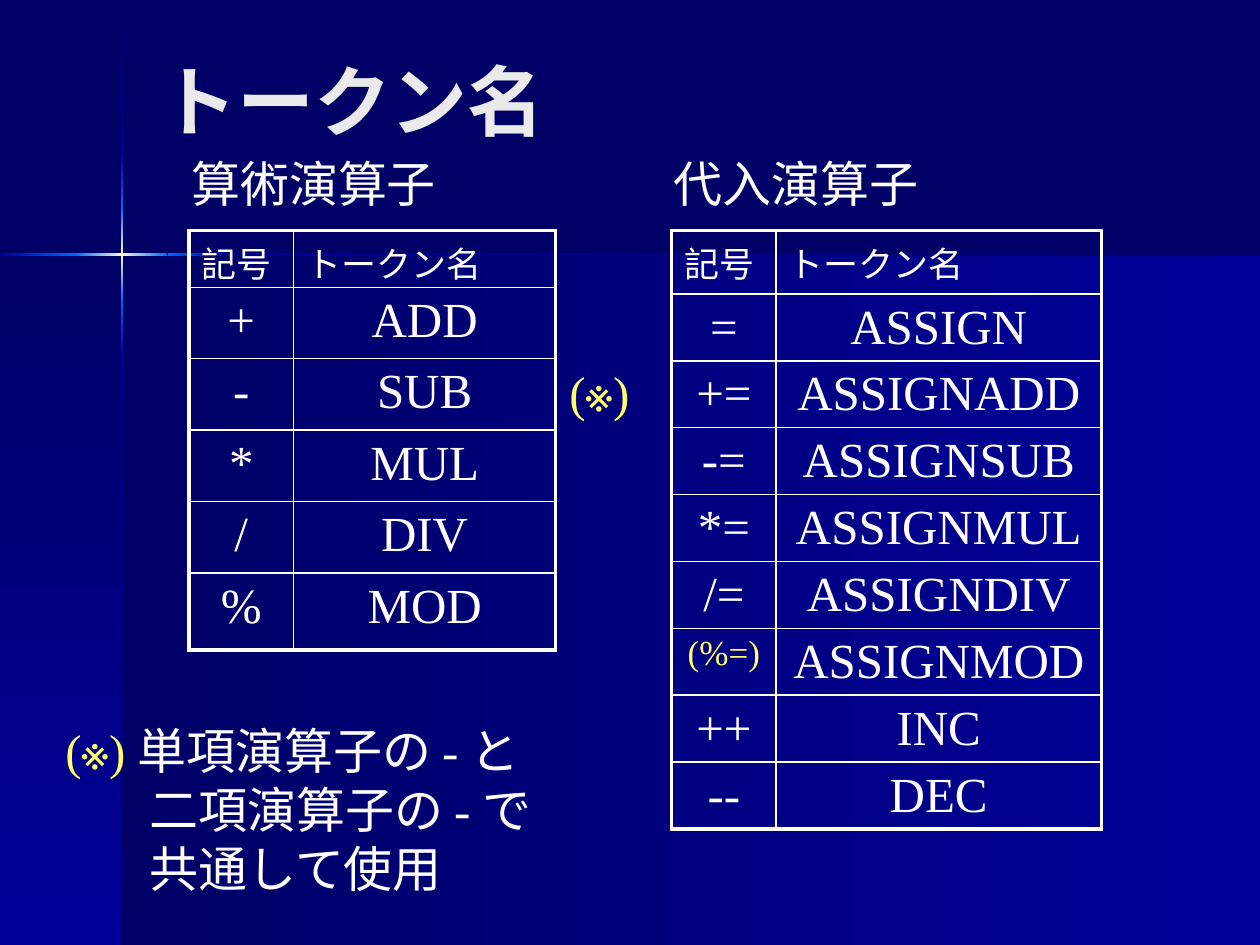
"""Build the slide listing token names for arithmetic and assignment operators."""
from dataclasses import dataclass

import lxml.etree
import pptx
import pptx.dml.color
import pptx.enum.shapes
import pptx.enum.text
import pptx.oxml.ns
import pptx.slide
import pptx.table
import pptx.text.text
import pptx.util

Inches = pptx.util.Inches
qn = pptx.oxml.ns.qn

FONT = "Times New Roman"
WHITE, YELLOW, TITLE_GRAY = "FFFFFF", "FFFF66", "EAEAEA"
NAVY, BLUE, BRIGHT, GLOW = "000066", "000099", "0066FF", "FFFFCC"
HEADER = ("記号", "トークン名")
OPTIONAL_SYMBOL = "(%=)"
OUTER_WIDTH, INNER_WIDTH = 2.25, 1


@dataclass
class Panel:
    """A gradient rectangle of the backdrop."""
    left: float
    top: float
    width: float
    height: float
    colors: tuple[str, ...]
    vertical: bool = False


@dataclass
class TokenTable:
    """A captioned table of operator symbols and their token names."""
    caption: str
    caption_left: float
    left: float
    height: float
    name_width: float
    row_heights: list[float]
    tokens: list[tuple[str, str]]


@dataclass
class Line:
    """A paragraph of coloured runs with a left indent."""
    runs: list[tuple[str, str]]
    indent: float = 0


PANELS = [
    Panel(0.97, 2.02, 9.03, 5.48, (NAVY, BLUE)),
    Panel(0, 2.02, 0.97, 5.48, (NAVY, BLUE), True),
    Panel(0.96, 0.01, 0.02, 1.2, (NAVY, BLUE), True),
    Panel(0.96, 2.82, 0.02, 4.68, (BLUE, NAVY), True),
    Panel(1.77, 2.01, 8.23, 0.02, (BLUE, NAVY)),
    Panel(0.96, 2.38, 0.02, 0.44, (BRIGHT, BLUE), True),
    Panel(0.96, 1.21, 0.02, 0.44, (BLUE, BRIGHT), True),
    Panel(0.96, 1.65, 0.02, 0.73, (BRIGHT, GLOW, BRIGHT), True),
    Panel(0, 2.01, 0.61, 0.02, (BLUE, BRIGHT)),
    Panel(1.33, 2.01, 0.44, 0.02, (BRIGHT, BLUE)),
    Panel(0.6, 2.01, 0.73, 0.02, (BRIGHT, GLOW, BRIGHT)),
]

TABLES = [
    TokenTable("代入演算子", 5.25, 5.33, 5.01, 2.58, [0.45] * 4 + [0.49] + [0.45] * 4, [
        ("=", "ASSIGN"), ("+=", "ASSIGNADD"), ("-=", "ASSIGNSUB"), ("*=", "ASSIGNMUL"),
        ("/=", "ASSIGNDIV"), (OPTIONAL_SYMBOL, "ASSIGNMOD"), ("++", "INC"), ("--", "DEC")]),
    TokenTable("算術演算子", 1.42, 1.5, 3.34, 2.08, [0.45] * 3 + [0.49, 0.45, 0.61], [
        ("+", "ADD"), ("-", "SUB"), ("*", "MUL"), ("/", "DIV"), ("%", "MOD")]),
]

NOTE = [
    Line([("(※) ", YELLOW), ("単項演算子の - と", WHITE)]),
    Line([("二項演算子の - で", WHITE)], 0.67),
    Line([("共通して使用", WHITE)], 0.67),
]


def rgb(color: str) -> pptx.dml.color.RGBColor:
    """Turn a hex string into a colour."""
    return pptx.dml.color.RGBColor.from_string(color)


def add_run(paragraph: pptx.text.text._Paragraph, text: str, size: float,
            color: str, bold: bool = False) -> None:
    """Append one formatted run."""
    run = paragraph.add_run()
    run.text = text
    run.font.name = FONT
    run.font.size = pptx.util.Pt(size)
    run.font.bold = bold
    run.font.color.rgb = rgb(color)


def draw_panel(slide: pptx.slide.Slide, panel: Panel) -> None:
    """Draw a backdrop rectangle with evenly spaced gradient stops."""
    backdrop = slide.shapes.add_shape(
        pptx.enum.shapes.MSO_SHAPE.RECTANGLE, Inches(panel.left), Inches(panel.top),
        Inches(panel.width), Inches(panel.height))
    backdrop.shadow.inherit = False
    backdrop.line.fill.background()
    backdrop.fill.gradient()
    backdrop.fill.gradient_angle = 270 if panel.vertical else 0
    stops = backdrop._element.spPr.find(qn("a:gradFill")).find(qn("a:gsLst"))
    for stop in list(stops):
        stops.remove(stop)
    for index, color in enumerate(panel.colors):
        position = 100000 * index // (len(panel.colors) - 1)
        stop = lxml.etree.SubElement(stops, qn("a:gs"), pos=str(position))
        lxml.etree.SubElement(stop, qn("a:srgbClr"), val=color)


def draw_text(slide: pptx.slide.Slide, left: float, top: float, width: float,
              height: float, lines: list[Line], wrap: bool = False) -> None:
    """Draw a text box of 28 point lines."""
    box = slide.shapes.add_textbox(Inches(left), Inches(top), Inches(width), Inches(height))
    frame = box.text_frame
    frame.word_wrap = wrap
    frame.auto_size = pptx.enum.text.MSO_AUTO_SIZE.SHAPE_TO_FIT_TEXT
    for index, line in enumerate(lines):
        paragraph = frame.add_paragraph() if index else frame.paragraphs[0]
        if line.indent:
            paragraph._p.get_or_add_pPr().set("marL", str(Inches(line.indent)))
        for text, color in line.runs:
            add_run(paragraph, text, 28, color)


def set_borders(cell: pptx.table._Cell, outer: dict[str, bool]) -> None:
    """Rule the four sides of a cell, heavier on the outer edges."""
    properties = cell._tc.get_or_add_tcPr()
    for side, is_outer in outer.items():
        width = pptx.util.Pt(OUTER_WIDTH if is_outer else INNER_WIDTH)
        rule = lxml.etree.SubElement(properties, qn(f"a:ln{side}"), w=str(width))
        fill = lxml.etree.SubElement(rule, qn("a:solidFill"))
        lxml.etree.SubElement(fill, qn("a:srgbClr"), val=WHITE)


def draw_token_table(slide: pptx.slide.Slide, spec: TokenTable) -> None:
    """Draw a token table and its caption."""
    rows = [HEADER, *spec.tokens]
    widths = (0.83, spec.name_width)
    holder = slide.shapes.add_table(
        len(rows), len(widths), Inches(spec.left), Inches(1.83),
        Inches(sum(widths)), Inches(spec.height))
    table = holder.table
    table.first_row = table.horz_banding = False
    for column, width in zip(table.columns, widths):
        column.width = Inches(width)
    for row, height in zip(table.rows, spec.row_heights):
        row.height = Inches(height)
    holder.height = Inches(spec.height)
    for r, entries in enumerate(rows):
        for c, text in enumerate(entries):
            cell = table.cell(r, c)
            set_borders(cell, {"L": c == 0, "R": c == len(widths) - 1,
                               "T": r == 0, "B": r == len(rows) - 1})
            cell.fill.background()
            paragraph = cell.text_frame.paragraphs[0]
            if r:
                paragraph.alignment = pptx.enum.text.PP_ALIGN.CENTER
            spacing = lxml.etree.SubElement(paragraph._p.get_or_add_pPr(), qn("a:spcBef"))
            lxml.etree.SubElement(spacing, qn("a:spcPct"), val="20000")
            optional = text == OPTIONAL_SYMBOL
            add_run(paragraph, text, 20 if r == 0 or optional else 28,
                    YELLOW if optional else WHITE)
    draw_text(slide, spec.caption_left, 1.17, 2.14, 0.57, [Line([(spec.caption, WHITE)])])


def set_title(slide: pptx.slide.Slide, text: str) -> None:
    """Place and format the slide title."""
    title = slide.shapes.title
    title.left, title.top = Inches(1.17), Inches(0.33)
    title.width, title.height = Inches(8.25), Inches(0.92)
    title.text_frame.vertical_anchor = pptx.enum.text.MSO_ANCHOR.MIDDLE
    paragraph = title.text_frame.paragraphs[0]
    paragraph.alignment = pptx.enum.text.PP_ALIGN.LEFT
    add_run(paragraph, text, 44, TITLE_GRAY, bold=True)


def main() -> None:
    """Assemble and save the slide."""
    deck = pptx.Presentation()
    deck.slide_width, deck.slide_height = Inches(10), Inches(7.5)
    slide = deck.slides.add_slide(deck.slide_layouts[5])
    slide.background.fill.solid()
    slide.background.fill.fore_color.rgb = rgb(NAVY)
    for panel in PANELS:
        draw_panel(slide, panel)
    for spec in TABLES:
        draw_token_table(slide, spec)
    draw_text(slide, 4.42, 2.83, 0.85, 0.57, [Line([("(※)", YELLOW)])])
    draw_text(slide, 0.42, 5.67, 5.17, 1.5, NOTE, wrap=True)
    set_title(slide, "トークン名")
    deck.save("out.pptx")


if __name__ == "__main__":
    main()
